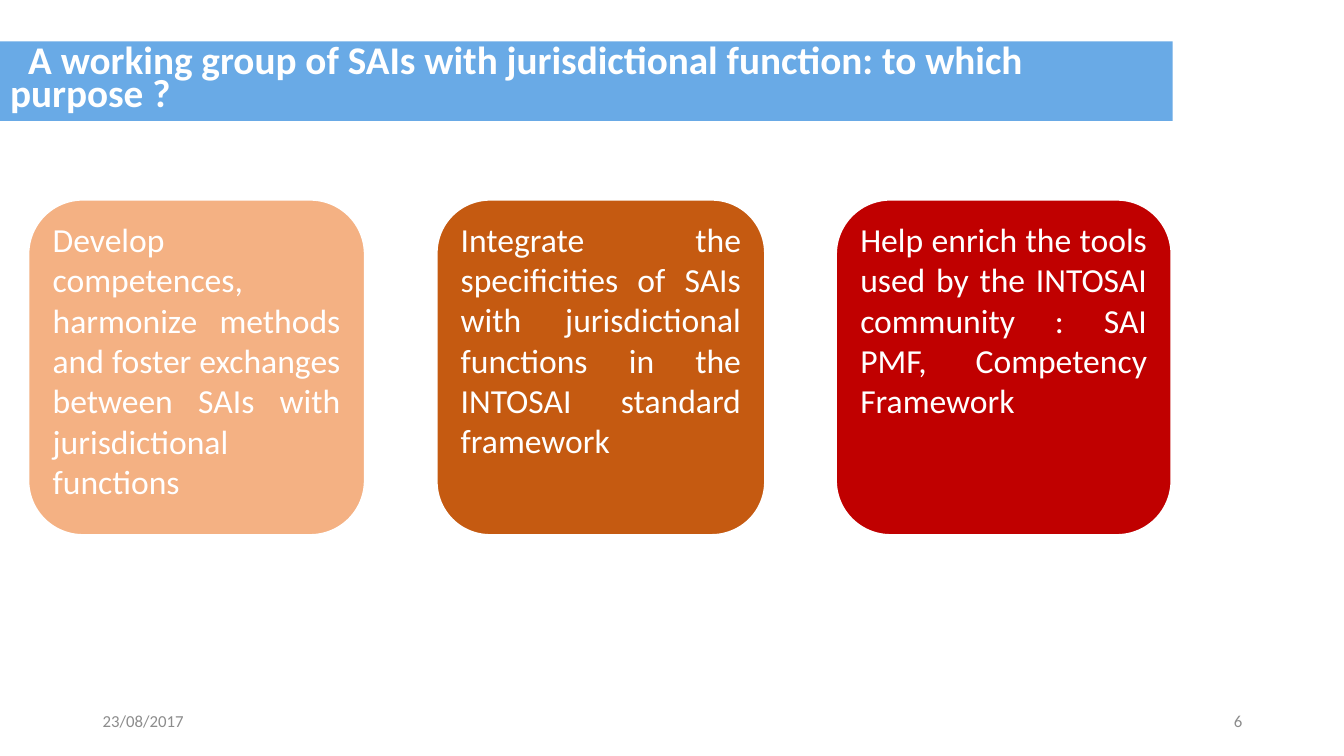
from pptx import Presentation
from pptx.dml.color import RGBColor
from pptx.enum.shapes import MSO_SHAPE
from pptx.enum.text import MSO_ANCHOR, MSO_AUTO_SIZE, PP_ALIGN
from pptx.util import Inches, Pt

WHITE = RGBColor(0xFF, 0xFF, 0xFF)
GREY = RGBColor(0x8C, 0x8C, 0x8C)
BLUE = RGBColor(0x69, 0xAA, 0xE6)
PEACH = RGBColor(0xF4, 0xB1, 0x83)
ORANGE = RGBColor(0xC5, 0x5A, 0x11)
RED = RGBColor(0xC0, 0x00, 0x00)

CARD_TOP, CARD_HEIGHT = 1.96, 3.37
FOOTER_TOP, FOOTER_WIDTH, FOOTER_HEIGHT = 6.95, 3, 0.4

PURPOSES = [
    (0.26, 3.38, PEACH, "Develop competences, harmonize methods and foster "
     "exchanges between SAIs with jurisdictional functions"),
    (4.31, 3.3, ORANGE, "Integrate the specificities of SAIs with jurisdictional "
     "functions in the INTOSAI standard framework"),
    (8.27, 3.37, RED, "Help enrich the tools used by the INTOSAI community : "
     "SAI PMF, Competency Framework"),
]


class PurposeSlide:
    font_name = "Calibri"

    def __init__(self, presentation):
        self.slide = presentation.slides.add_slide(presentation.slide_layouts[5])

    def set_text(self, shape, text, size, color, align, anchor, bold=False):
        frame = shape.text_frame
        frame.text = text
        frame.word_wrap = True
        frame.auto_size = MSO_AUTO_SIZE.NONE
        frame.vertical_anchor = anchor
        paragraph = frame.paragraphs[0]
        paragraph.alignment = align
        font = paragraph.runs[0].font
        font.name = self.font_name
        font.size = Pt(size)
        font.bold = bold
        font.color.rgb = color
        return paragraph

    def title(self, text):
        heading = self.slide.shapes.title
        heading.left, heading.top = Inches(0), Inches(0.41)
        heading.width, heading.height = Inches(11.63), Inches(0.79)
        heading.fill.solid()
        heading.fill.fore_color.rgb = BLUE
        paragraph = self.set_text(heading, text, 28, WHITE, PP_ALIGN.LEFT,
                                  MSO_ANCHOR.MIDDLE, bold=True)
        paragraph.line_spacing = 0.7
        paragraph._p.get_or_add_pPr().set("indent", str(Inches(0.18)))

    def card(self, left, width, color, text):
        card = self.slide.shapes.add_shape(
            MSO_SHAPE.ROUNDED_RECTANGLE, Inches(left), Inches(CARD_TOP),
            Inches(width), Inches(CARD_HEIGHT))
        card.shadow.inherit = False
        card.fill.solid()
        card.fill.fore_color.rgb = color
        card.line.color.rgb = WHITE
        card.line.width = Pt(4.5)
        self.set_text(card, text, 24, WHITE, PP_ALIGN.JUSTIFY, MSO_ANCHOR.TOP)

    def footer(self, left, text, align):
        footer = self.slide.shapes.add_textbox(
            Inches(left), Inches(FOOTER_TOP),
            Inches(FOOTER_WIDTH), Inches(FOOTER_HEIGHT))
        self.set_text(footer, text, 12, GREY, align, MSO_ANCHOR.MIDDLE)


def main():
    presentation = Presentation()
    presentation.slide_width = Inches(13.33)
    presentation.slide_height = Inches(7.5)
    page = PurposeSlide(presentation)
    page.title("A working group of SAIs with jurisdictional function: "
               "to which purpose ?")
    for left, width, color, text in PURPOSES:
        page.card(left, width, color, text)
    page.footer(0.92, "23/08/2017", PP_ALIGN.LEFT)
    page.footer(9.42, "6", PP_ALIGN.RIGHT)
    presentation.save("out.pptx")


if __name__ == "__main__":
    main()
